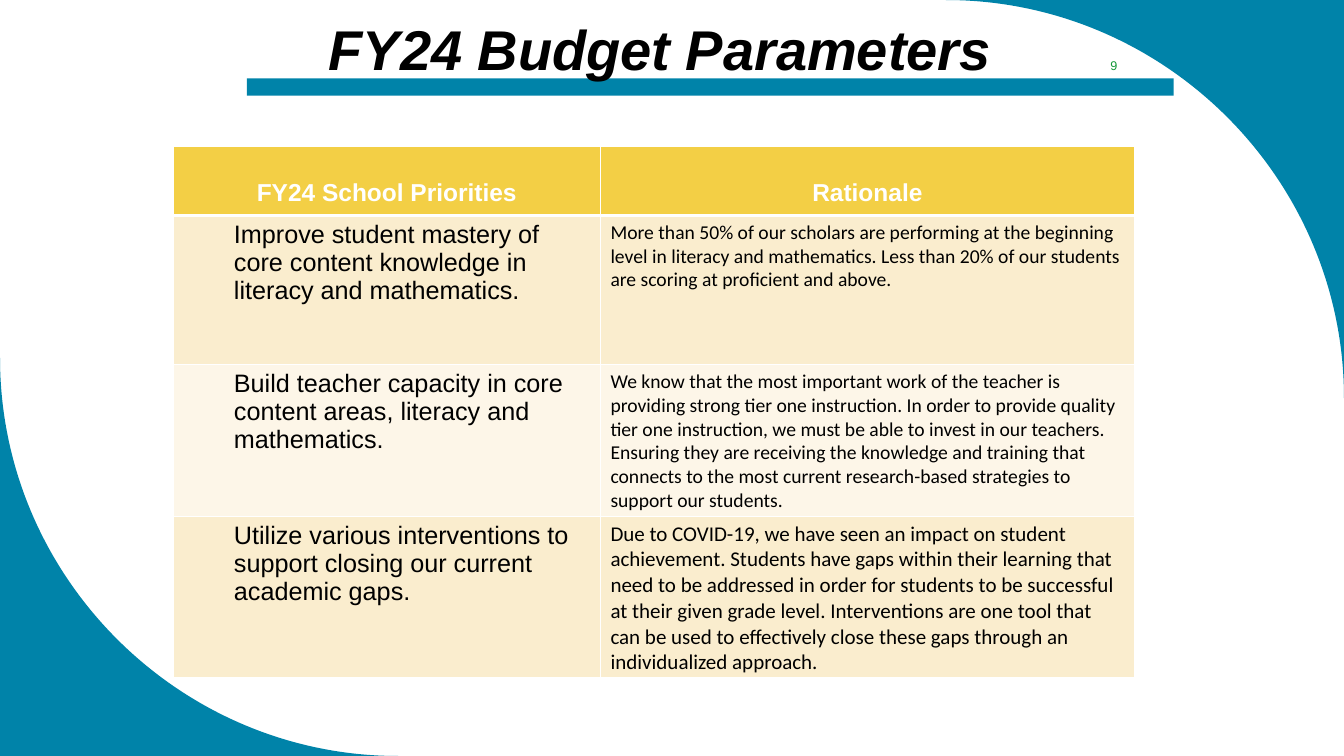
from lxml.etree import SubElement
from pptx import Presentation
from pptx.dml.color import RGBColor
from pptx.enum.shapes import MSO_SHAPE
from pptx.enum.text import MSO_ANCHOR, PP_ALIGN
from pptx.oxml.ns import qn
from pptx.util import Pt

WIDTH, HEIGHT = 960, 540
BEND = 0.55  # pull of a quarter circle's control points
HUES = {"teal": "0083A9", "gold": "F3CF45", "sand": "FAEDCE", "cream": "FDF6E8",
        "white": "FFFFFF", "black": "000000", "green": "159839"}


def hue(name):
    return RGBColor.from_string(HUES[name])


def write(frame, text, size=18, font="Arial", color="black", bold=False,
          italic=False, align=PP_ALIGN.LEFT):
    frame.word_wrap = True
    para = frame.paragraphs[0]
    para.alignment = align
    run = para.add_run()
    run.text = text
    style = run.font
    style.size, style.name = Pt(size), font
    style.bold, style.italic = bold, italic
    style.color.rgb = hue(color)


class Deck:
    def __init__(self):
        self.show = Presentation()
        self.show.slide_width, self.show.slide_height = Pt(WIDTH), Pt(HEIGHT)
        self.slide = self.show.slides.add_slide(self.show.slide_layouts[6])
        self.shapes = self.slide.shapes

    def paint(self, shape, color):
        shape.shadow.inherit = False
        shape.fill.solid()
        shape.fill.fore_color.rgb = hue(color)
        shape.line.fill.background()

    def corner(self, tip, first, last, color="teal"):
        """Fill a slide corner up to the quarter circle from first to last."""
        tip, first, last = [tuple(map(Pt, spot)) for spot in (tip, first, last)]
        form = self.shapes.build_freeform(*tip)
        form.add_line_segments([first, last], close=True)
        shape = form.convert_to_shape()
        # Turn the second line into a curve that bends toward the tip
        line = list(shape.element.iter(qn("a:lnTo")))[1]
        line.tag = qn("a:cubicBezTo")
        for slot, end in enumerate((first, last)):
            x, y = [round(e + BEND * (t - e)) for e, t in zip(end, tip)]
            dot = SubElement(line, qn("a:pt"), x=str(x - shape.left), y=str(y - shape.top))
            line.insert(slot, dot)
        self.paint(shape, color)

    def bar(self, box, color="teal"):
        self.paint(self.shapes.add_shape(MSO_SHAPE.RECTANGLE, *map(Pt, box)), color)

    def label(self, box, text, anchor=MSO_ANCHOR.TOP, **style):
        frame = self.shapes.add_textbox(*map(Pt, box)).text_frame
        frame.vertical_anchor = anchor
        write(frame, text, align=PP_ALIGN.CENTER, **style)

    def edge(self, cell, **widths):
        props = cell._tc.get_or_add_tcPr()
        for side in "LRTB":
            line = SubElement(props, qn("a:ln" + side), w=str(Pt(widths.get(side, 1))))
            fill = SubElement(line, qn("a:solidFill"))
            SubElement(fill, qn("a:srgbClr"), val=HUES["white"])

    def cell(self, cell, text, fill, indent=0, edges=None, **style):
        self.edge(cell, **(edges or {}))
        cell.fill.solid()
        cell.fill.fore_color.rgb = hue(fill)
        cell.margin_left = Pt(7.2 + indent)
        write(cell.text_frame, text, **style)

    def table(self, left, top, cols, rows, heads, body):
        grid = self.shapes.add_table(len(rows), len(cols), Pt(left), Pt(top),
                                     Pt(sum(cols)), Pt(sum(rows))).table
        for col, width in zip(grid.columns, cols):
            col.width = Pt(width)
        for row, height in zip(grid.rows, rows):
            row.height = Pt(height)
        for c, head in enumerate(heads):
            cell = grid.cell(0, c)
            self.cell(cell, head, "gold", edges={"B": 3}, size=17.5, color="white",
                      bold=True, align=PP_ALIGN.CENTER)
            cell.vertical_anchor = MSO_ANCHOR.BOTTOM
            cell.margin_bottom = Pt(6.2)
        for r, (goal, reason, size) in enumerate(body, 1):
            fill = "sand" if r % 2 else "cream"
            edges = {"T": 3} if r == 1 else {}
            self.cell(grid.cell(r, 0), goal, fill, indent=36, edges=edges)
            self.cell(grid.cell(r, 1), reason, fill, edges=edges,
                      size=size, font="Calibri")


HEADS = ["FY24 School Priorities", "Rationale"]
# Priority, rationale, rationale text size
BODY = [
    ("Improve student mastery of core content knowledge in literacy and mathematics.",
     "More than 50% of our scholars are performing at the beginning level in literacy "
     "and mathematics. Less than 20% of our students are scoring at proficient and above.",
     14),
    ("Build teacher capacity in core content areas, literacy and mathematics.",
     "We know that the most important work of the teacher is providing strong tier one "
     "instruction. In order to provide quality tier one instruction, we must be able to "
     "invest in our teachers. Ensuring they are receiving the knowledge and training that "
     "connects to the most current research-based strategies to support our students.",
     14),
    ("Utilize various interventions to support closing our current academic gaps.",
     "Due to COVID-19, we have seen an impact on student achievement. Students have gaps "
     "within their learning that need to be addressed in order for students to be "
     "successful at their given grade level. Interventions are one tool that can be used "
     "to effectively close these gaps through an individualized approach.",
     15),
]


def main():
    deck = Deck()

    # Curved corners
    radius = 284.4
    deck.corner((WIDTH, 0), (WIDTH - radius, 0), (WIDTH, radius))
    deck.corner((0, HEIGHT), (radius, HEIGHT), (0, HEIGHT - radius))

    # Title and rule
    deck.bar((176.4, 56, 662, 12.4))
    deck.label((219.6, 6.5, 503.3, 55.4), "FY24 Budget Parameters",
               size=40, bold=True, italic=True)

    # Priorities table
    deck.table(123.9, 104.8, [305, 381.5], [49.2, 106.5, 108.2, 115], HEADS, BODY)

    # Page number
    deck.label((766.4, 36, 58.4, 21.6), "9", anchor=MSO_ANCHOR.MIDDLE,
               size=9, color="green")

    deck.show.save("out.pptx")


if __name__ == "__main__":
    main()
